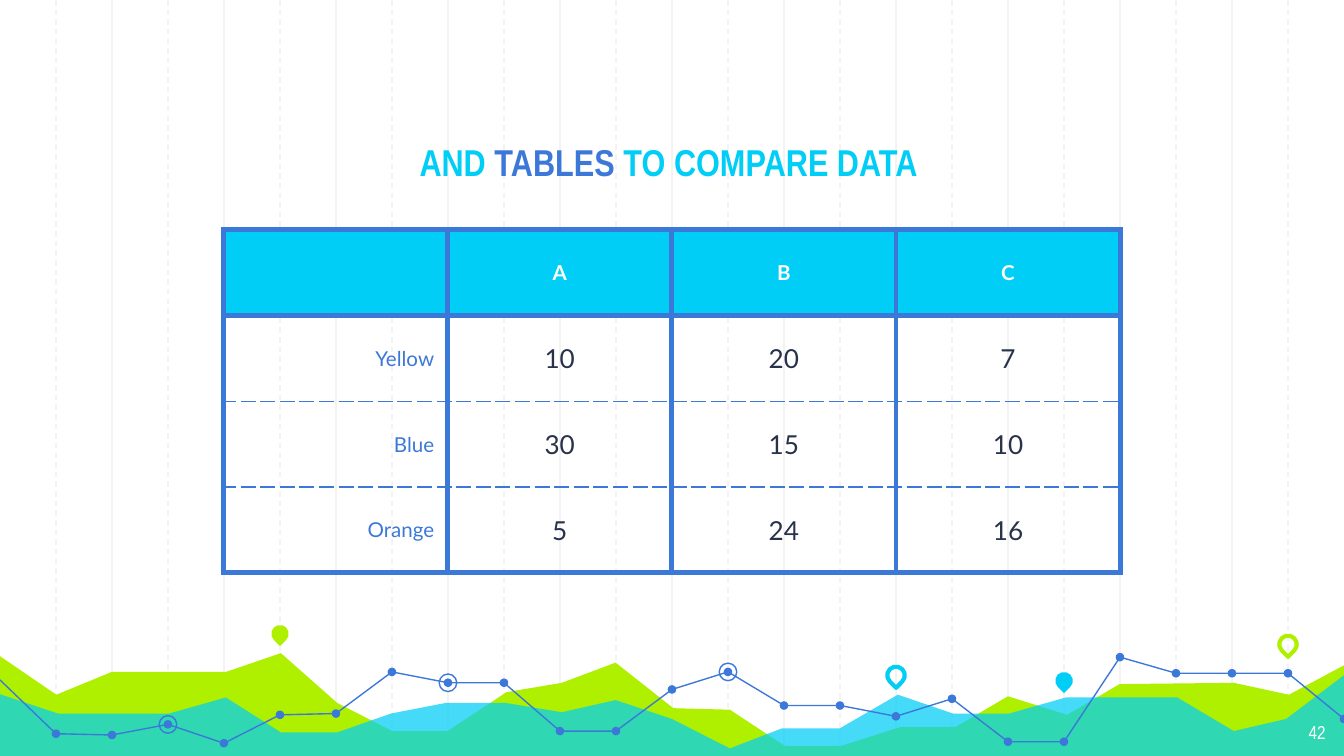
"""Build the table comparison slide with its decorative chart footer."""
from dataclasses import dataclass
from typing import Optional

from lxml.etree import SubElement
from pptx import Presentation
from pptx.dml.color import RGBColor
from pptx.enum.dml import MSO_LINE
from pptx.enum.shapes import MSO_CONNECTOR, MSO_SHAPE
from pptx.enum.text import MSO_ANCHOR, MSO_AUTO_SIZE, PP_ALIGN
from pptx.oxml.ns import qn
from pptx.util import Pt

BLUE, CYAN, LIME = "3C78D8", "00CEF6", "AFF000"
WHITE, NAVY, GRAY = "FFFFFF", "28324A", "F3F3F3"
GRID_STEP = 30
GRID_BOTTOM = 406.8
MARK_SIZE = 9.4
DOT_SIZE = 4.6


@dataclass
class Area:
    points: list
    color: str
    alpha: int = 100


@dataclass
class Mark:
    column: int
    y: float
    color: str
    filled: bool


@dataclass
class Style:
    size: float
    font: str
    color: str
    bold: bool = False


AREAS = [
    Area([(-1.4, 350.6), (30.2, 372.2), (59.8, 360), (121, 360), (150.5, 349.9),
          (180.7, 376.6), (210.2, 391.7), (239.8, 391.7), (271.4, 370.8), (301, 365.8),
          (329.8, 355), (360.7, 379.4), (391, 380.2), (420.5, 399.6), (450.7, 399.6),
          (482.4, 389.5), (511.9, 389.5), (540, 373), (571.7, 383), (599.8, 366.5),
          (661, 365.8), (690.5, 372.2), (721.4, 355.7), (720.7, 406.1), (-2.2, 406.1)],
         LIME),
    Area([(-1.4, 371.5), (31, 382.3), (90.7, 382.3), (121, 373.7), (150.5, 392.4),
          (180.7, 392.4), (209.5, 382.3), (239, 376.6), (270.7, 376.6), (301, 381.6),
          (329.8, 375.1), (360, 385.2), (391, 401), (419, 390.2), (450, 390.2),
          (481, 372.2), (510.5, 382.3), (540.7, 382.3), (571, 373.7), (630.7, 373.7),
          (661, 391.7), (689, 385.2), (721.4, 360.7), (721.4, 406.8), (-2.2, 406.8)],
         CYAN, 73),
]
PINS = [Mark(5, 339.5, LIME, True), Mark(16, 361.8, CYAN, False),
        Mark(19, 364.7, CYAN, True), Mark(23, 345.2, LIME, False)]
TREND = [364.3, 393.1, 393.8, 388.1, 398.2, 383, 382.3, 360, 365.8, 365.8, 391.7, 391.7,
         369.4, 360, 378, 378, 383.8, 374.4, 397.4, 397.4, 352.1, 360.7, 360.7, 360.7, 385.2]
TREND_PARTS = [(0, 11), (11, 20), (20, 24)]
RING_COLUMNS = [8, 3, 13]
ROWS = [["", "A", "B", "C"], ["Yellow", "10", "20", "7"],
        ["Blue", "30", "15", "10"], ["Orange", "5", "24", "16"]]


def color(value: str) -> RGBColor:
    return RGBColor.from_string(value)


def paint(shape, fill: Optional[str] = None, line: Optional[str] = None,
          width: float = 0.75, alpha: int = 100) -> None:
    shape.shadow.inherit = False
    if fill:
        shape.fill.solid()
        shape.fill.fore_color.rgb = color(fill)
        if alpha < 100:
            fill_color = shape._element.spPr.find(".//" + qn("a:srgbClr"))
            SubElement(fill_color, qn("a:alpha"), val=str(alpha * 1000))
    else:
        shape.fill.background()
    if line:
        shape.line.color.rgb = color(line)
        shape.line.width = Pt(width)
    else:
        shape.line.fill.background()


def add_grid_line(slide, column: int) -> None:
    x = Pt(column * GRID_STEP)
    connector = slide.shapes.add_connector(MSO_CONNECTOR.STRAIGHT, x, 0, x, Pt(GRID_BOTTOM))
    connector.line.color.rgb = color(GRAY)
    connector.line.width = Pt(0.75)
    if column % 2:
        connector.line.dash_style = MSO_LINE.DASH
    SubElement(connector._element.spPr, qn("a:effectLst"))


def add_path(slide, points: list, close: bool):
    corners = [(Pt(x), Pt(y)) for x, y in points]
    builder = slide.shapes.build_freeform(*corners[0])
    builder.add_line_segments(corners[1:], close=close)
    return builder.convert_to_shape()


def add_centered(slide, kind: MSO_SHAPE, column: int, y: float, size: float):
    left = column * GRID_STEP - size / 2
    return slide.shapes.add_shape(kind, Pt(left), Pt(y - size / 2), Pt(size), Pt(size))


def add_pin(slide, pin: Mark) -> None:
    shape = add_centered(slide, MSO_SHAPE.TEAR, pin.column, pin.y, MARK_SIZE)
    shape.rotation = 135
    if pin.filled:
        paint(shape, fill=pin.color)
    else:
        paint(shape, line=pin.color, width=2.25)


def add_trend(slide) -> None:
    points = [(column * GRID_STEP, y) for column, y in enumerate(TREND)]
    for first, last in TREND_PARTS:
        paint(add_path(slide, points[first:last + 1], False), line=BLUE)
    for column, y in list(enumerate(TREND))[1:]:
        paint(add_centered(slide, MSO_SHAPE.OVAL, column, y, DOT_SIZE), fill=BLUE)
    for column in RING_COLUMNS:
        ring = add_centered(slide, MSO_SHAPE.OVAL, column, TREND[column], MARK_SIZE)
        paint(ring, line=BLUE)


def add_run(paragraph, text: str, style: Style) -> None:
    run = paragraph.add_run()
    run.text = text
    run.font.size = Pt(style.size)
    run.font.name = style.font
    run.font.bold = style.bold
    run.font.color.rgb = color(style.color)


def set_margins(frame, horizontal: float, vertical: float) -> None:
    frame.margin_left = frame.margin_right = Pt(horizontal)
    frame.margin_top = frame.margin_bottom = Pt(vertical)


def add_border(cell, side: str, dashed: bool) -> None:
    width = Pt(0.75 if dashed else 3)
    border = SubElement(cell._tc.get_or_add_tcPr(), qn("a:ln" + side), w=str(width))
    fill = SubElement(border, qn("a:solidFill"))
    SubElement(fill, qn("a:srgbClr"), val=str(color(BLUE)))
    SubElement(border, qn("a:prstDash"), val="dash" if dashed else "solid")


def format_cell(cell, text: str, row: int, column: int) -> None:
    dashes = {"L": False, "R": False, "T": row > 1, "B": 0 < row < len(ROWS) - 1}
    for side, dashed in dashes.items():
        add_border(cell, side, dashed)
    if row == 0:
        cell.fill.solid()
        cell.fill.fore_color.rgb = color(CYAN)
        style = Style(11, "Lato", WHITE, True)
    else:
        cell.fill.background()
        style = Style(14, "Lato", NAVY) if column else Style(11, "Lato", BLUE)
    cell.vertical_anchor = MSO_ANCHOR.MIDDLE
    set_margins(cell, 7.2, 5)
    if text:
        paragraph = cell.text_frame.paragraphs[0]
        paragraph.alignment = PP_ALIGN.CENTER if column or row == 0 else PP_ALIGN.RIGHT
        add_run(paragraph, text, style)


def add_comparison_table(slide) -> None:
    table = slide.shapes.add_table(len(ROWS), len(ROWS[0]), Pt(119.75), Pt(123),
                                   Pt(480.4), Pt(184)).table
    table.first_row = table.horz_banding = False
    for column in table.columns:
        column.width = Pt(120.1)
    for row_index, row in enumerate(ROWS):
        table.rows[row_index].height = Pt(46)
        for column_index, text in enumerate(row):
            format_cell(table.cell(row_index, column_index), text, row_index, column_index)


def fill_title(slide) -> None:
    title = slide.shapes.title
    slide.shapes._spTree.append(title._element)
    title.left, title.top, title.width, title.height = Pt(82.8), Pt(49.7), Pt(550.8), Pt(56.2)
    frame = title.text_frame
    frame.auto_size = MSO_AUTO_SIZE.NONE
    frame.vertical_anchor = MSO_ANCHOR.BOTTOM
    set_margins(frame, 7.2, 7.2)
    frame.paragraphs[0].alignment = PP_ALIGN.CENTER
    for text, shade in [("AND ", CYAN), ("TABLES", BLUE), (" TO COMPARE DATA", CYAN)]:
        add_run(frame.paragraphs[0], text, Style(20, "Arial Narrow", shade, True))


def add_page_number(slide) -> None:
    frame = slide.shapes.add_textbox(Pt(674), Pt(380.2), Pt(43.2), Pt(25.2)).text_frame
    frame.word_wrap = True
    set_margins(frame, 7.2, 7.2)
    frame.paragraphs[0].alignment = PP_ALIGN.RIGHT
    add_run(frame.paragraphs[0], "42", Style(10, "Arial Narrow", WHITE))


def main() -> None:
    presentation = Presentation()
    presentation.slide_width, presentation.slide_height = Pt(720), Pt(405)
    slide = presentation.slides.add_slide(presentation.slide_layouts[5])
    for column in [*range(2, 23, 2), *range(1, 24, 2)]:
        add_grid_line(slide, column)
    for area in AREAS:
        paint(add_path(slide, area.points, True), fill=area.color, alpha=area.alpha)
    for pin in PINS:
        add_pin(slide, pin)
    add_trend(slide)
    fill_title(slide)
    add_comparison_table(slide)
    add_page_number(slide)
    presentation.save("out.pptx")


if __name__ == "__main__":
    main()
